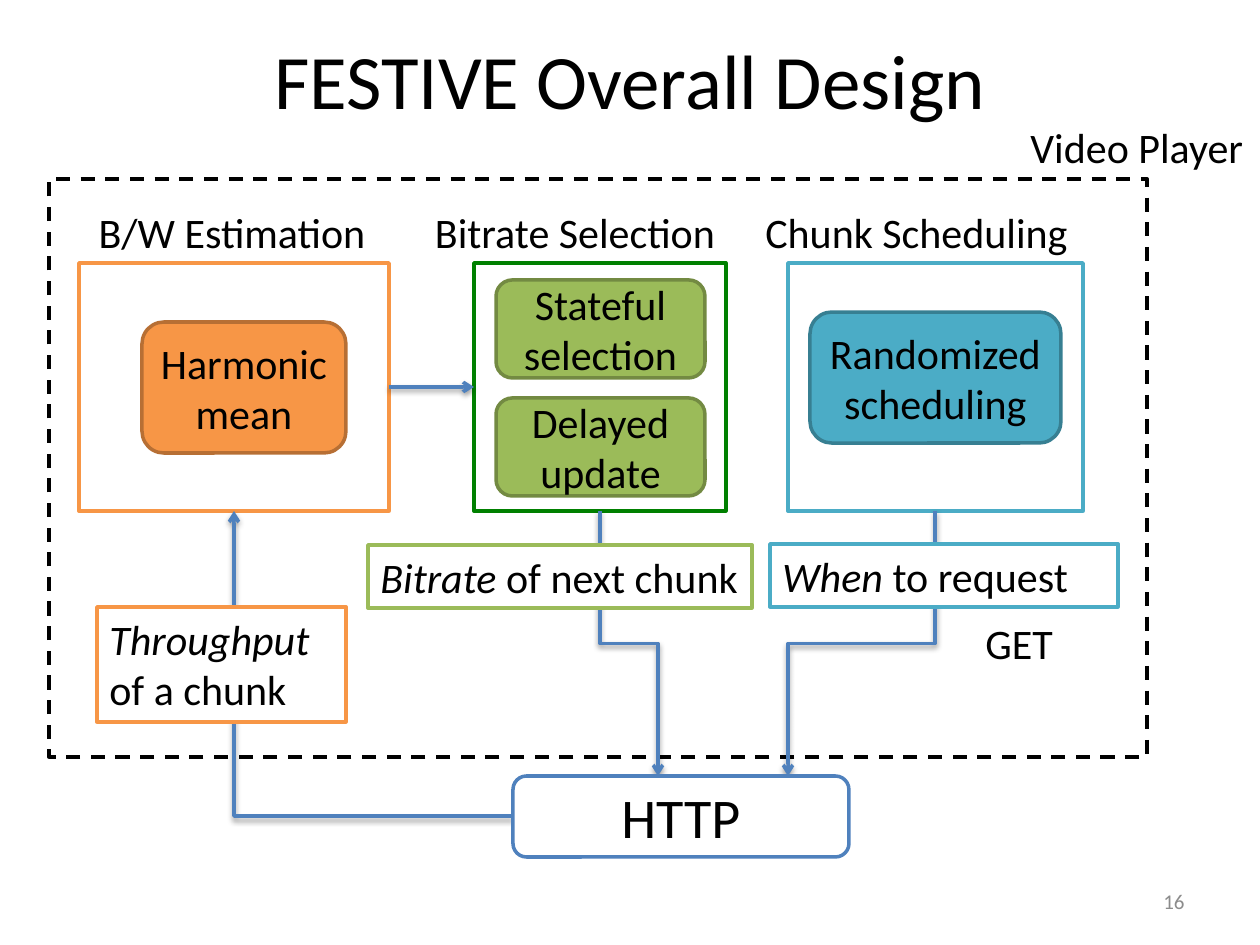
from dataclasses import dataclass

from lxml.etree import SubElement
from pptx import Presentation
from pptx.dml.color import RGBColor
from pptx.enum.dml import MSO_LINE
from pptx.enum.shapes import MSO_CONNECTOR, MSO_SHAPE
from pptx.enum.text import MSO_ANCHOR, PP_ALIGN
from pptx.oxml import parse_xml
from pptx.oxml.ns import nsdecls, qn
from pptx.util import Pt

SCALE = 914400 / 126


@dataclass(frozen=True)
class Theme:
    """Colours, font and type sizes of the deck."""
    font: str = "Calibri"
    ink: str = "000000"
    paper: str = "FFFFFF"
    muted: str = "8C8C8C"
    blue: str = "4F81BD"
    orange: str = "F79646"
    orange_edge: str = "B76F34"
    green: str = "9BBB59"
    green_edge: str = "738A42"
    green_panel: str = "008000"
    teal: str = "4BACC6"
    teal_edge: str = "377F92"
    title: int = 44
    large: int = 32
    body: int = 24
    small: int = 12
    stroke: int = 2


THEME = Theme()


def px(*lengths):
    """Turn pixel lengths into EMU."""
    return [round(length * SCALE) for length in lengths]


def write(box, spans, size=THEME.body, color=THEME.ink, align=PP_ALIGN.LEFT,
          anchor=MSO_ANCHOR.TOP, wrap=True):
    """Fill a box with one paragraph of (text, italic) spans."""
    frame = box.text_frame
    frame.word_wrap = wrap
    frame.vertical_anchor = anchor
    para = frame.paragraphs[0]
    para.alignment = align
    for text, italic in spans:
        span = para.add_run()
        span.text = text
        span.font.name = THEME.font
        span.font.size = Pt(size)
        span.font.italic = italic
        span.font.color.rgb = RGBColor.from_string(color)


def add_label(page, bounds, text, **style):
    """Place a text box."""
    write(page.shapes.add_textbox(*px(*bounds)), [(text, False)], **style)


def add_box(page, bounds, edge, fill=THEME.paper, kind=MSO_SHAPE.RECTANGLE):
    """Place an outlined shape without shadow."""
    box = page.shapes.add_shape(kind, *px(*bounds))
    box.shadow.inherit = False
    box.fill.solid()
    box.fill.fore_color.rgb = RGBColor.from_string(fill)
    box.line.color.rgb = RGBColor.from_string(edge)
    box.line.width = Pt(THEME.stroke)
    return box


def add_chip(page, bounds, text, edge, fill, size=THEME.body):
    """Place a rounded box with centred text."""
    box = add_box(page, bounds, edge, fill, MSO_SHAPE.ROUNDED_RECTANGLE)
    write(box, [(text, False)], size, align=PP_ALIGN.CENTER, anchor=MSO_ANCHOR.MIDDLE)


def add_panel(page, bounds, heading, heading_bounds, edge, chips, chip_edge, chip_fill):
    """Draw a headed stage whose chips are placed relative to its corner."""
    left, top = bounds[:2]
    panel = add_box(page, bounds, edge)
    add_label(page, heading_bounds, heading, align=PP_ALIGN.CENTER, wrap=False)
    for text, (x, y, width, height) in chips:
        add_chip(page, (left + x, top + y, width, height), text, chip_edge, chip_fill)
    return panel


def add_note(page, bounds, edge, lead, rest):
    """Place a note that starts with an italic word."""
    write(add_box(page, bounds, edge), [(lead, True), (rest, False)])


def add_arrow(page, kind, start, end):
    """Draw a blue arrow with a soft shadow."""
    arrow = page.shapes.add_connector(kind, *px(*start, *end))
    arrow.line.color.rgb = RGBColor.from_string(THEME.blue)
    arrow.line.width = Pt(THEME.stroke)
    SubElement(arrow.line._get_or_add_ln(), qn("a:tailEnd"), type="arrow")
    arrow._element.spPr.append(parse_xml(
        f'<a:effectLst {nsdecls("a")}><a:outerShdw blurRad="40000" dist="20000" '
        f'dir="5400000" rotWithShape="0"><a:srgbClr val="{THEME.ink}">'
        '<a:alpha val="38000"/></a:srgbClr></a:outerShdw></a:effectLst>'))
    return arrow


def turn(arrow, degrees):
    """Rotate a connector about its centre."""
    arrow._element.spPr.find(qn("a:xfrm")).set("rot", str(degrees * 60000))


def add_down_elbow(page, start, end):
    """Draw an elbow that leaves and arrives vertically."""
    (x1, y1), (x2, y2) = start, end
    middle_x, middle_y = (x1 + x2) / 2, (y1 + y2) / 2
    half_x, half_y = (x2 - x1) / 2, (y2 - y1) / 2
    arrow = add_arrow(page, MSO_CONNECTOR.ELBOW, (middle_x - half_y, middle_y + half_x),
                      (middle_x + half_y, middle_y - half_x))
    turn(arrow, 90)


def add_corner(page, start, end):
    """Draw a single bend that runs left and then up."""
    arrow = add_arrow(page, MSO_CONNECTOR.ELBOW, end, start)
    arrow._element.spPr.find(qn("a:prstGeom")).set("prst", "bentConnector2")
    turn(arrow, 180)


def add_player(page, bounds):
    """Draw the video player with its three stages, flows and notes."""
    left, top, _, height = bounds
    add_box(page, bounds, THEME.ink).line.dash_style = MSO_LINE.DASH
    stage_top, stage_height, heading_top = top + 84, 248, top + 21

    def stage(x, width, heading, heading_x, heading_width, *look):
        """Place one stage in the shared row."""
        return add_panel(page, (left + x, stage_top, width, stage_height), heading,
                         (left + heading_x, heading_top, heading_width, 63), *look)

    estimation = stage(30, 310, "B/W Estimation", 35, 296, THEME.orange,
                       [("Harmonic mean", (63, 59, 204, 131))],
                       THEME.orange_edge, THEME.orange)
    selection = stage(425, 252, "Bitrate Selection", 371, 310, THEME.green_panel,
                      [("Stateful selection", (22, 17, 209, 98)),
                       ("Delayed update", (22, 135, 209, 98))],
                      THEME.green_edge, THEME.green)
    stage(739, 295, "Chunk Scheduling", 702, 331, THEME.teal,
          [("Randomized scheduling", (22, 49, 251, 131))],
          THEME.teal_edge, THEME.teal)

    stage_middle = stage_top + stage_height // 2
    stage_bottom = stage_top + stage_height
    service_top = top + height + 19
    link = add_arrow(page, MSO_CONNECTOR.STRAIGHT, (left + 340, stage_middle),
                     (left + 425, stage_middle))
    link.begin_connect(estimation, 3)
    link.end_connect(selection, 1)
    add_corner(page, (left + 464, service_top + 40), (left + 185, stage_bottom))
    add_down_elbow(page, (left + 551, stage_bottom), (left + 609, service_top))
    add_down_elbow(page, (left + 886, stage_bottom), (left + 739, service_top))

    add_note(page, (left + 319, top + 366, 384, 63), THEME.green, "Bitrate", " of next chunk")
    add_note(page, (left + 721, top + 365, 348, 63), THEME.teal, "When", " to request")
    add_note(page, (left + 48, top + 428, 249, 115), THEME.orange, "Throughput", " of a chunk")
    add_label(page, (left + 924, top + 432, 95, 63), "GET", wrap=False)
    add_label(page, (left + 969, top - 64, 242, 63), "Video Player", wrap=False)


def main():
    """Build and save the deck."""
    deck = Presentation()
    deck.slide_width, deck.slide_height = px(1260, 945)
    page = deck.slides.add_slide(deck.slide_layouts[6])
    add_label(page, (63, 0, 1134, 158), "FESTIVE Overall Design", size=THEME.title,
              align=PP_ALIGN.CENTER, anchor=MSO_ANCHOR.MIDDLE)
    add_player(page, (49, 179, 1098, 578))
    add_chip(page, (513, 776, 336, 81), "HTTP", THEME.blue, THEME.paper, THEME.large)
    add_label(page, (903, 876, 294, 50), "16", size=THEME.small, color=THEME.muted,
              align=PP_ALIGN.RIGHT, anchor=MSO_ANCHOR.MIDDLE)
    deck.save("out.pptx")


if __name__ == "__main__":
    main()
